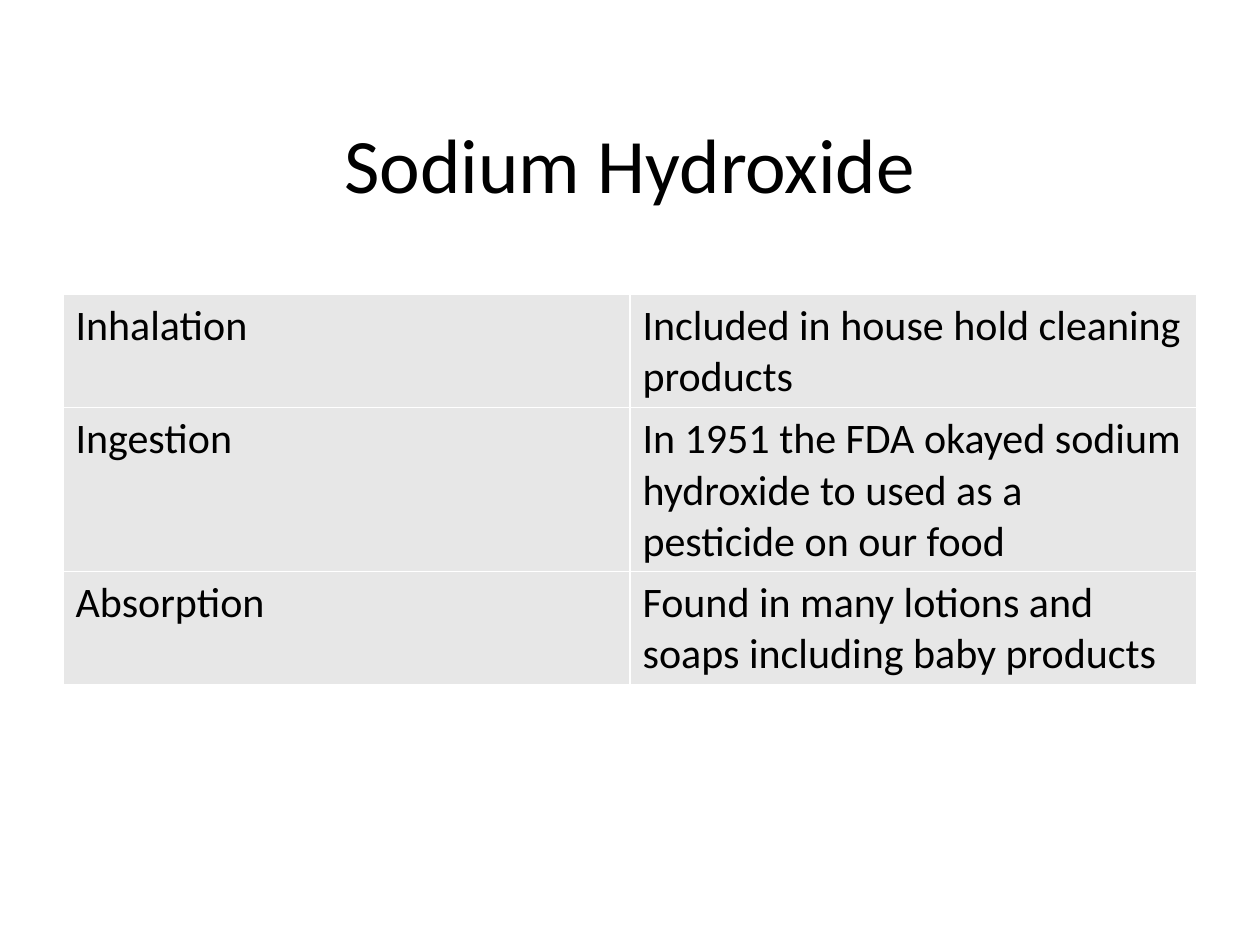
from dataclasses import dataclass

from lxml.etree import SubElement
from pptx import Presentation
from pptx.dml.color import RGBColor as RGB
from pptx.enum.text import MSO_ANCHOR as Anchor, PP_ALIGN as Align
from pptx.oxml.ns import qn
from pptx.util import Cm, Pt


@dataclass(frozen=True)
class Theme:
    font: str = "Calibri"
    text: str = "000000"
    cell: str = "E7E7E7"
    border: str = "FFFFFF"
    title_size: int = 44
    body_size: int = 24


theme = Theme()


def add_run(p, text, size):
    r = p.add_run()
    r.text = text
    r.font.name = theme.font
    r.font.size = Pt(size)
    r.font.color.rgb = RGB.from_string(theme.text)


def add_borders(cell):
    tc_pr = cell._tc.get_or_add_tcPr()
    for side in ("lnL", "lnR", "lnT", "lnB"):
        ln = SubElement(tc_pr, qn(f"a:{side}"), w=str(Pt(1)))
        fill = SubElement(ln, qn("a:solidFill"))
        SubElement(fill, qn("a:srgbClr"), val=theme.border)


prs = Presentation()
prs.slide_width, prs.slide_height = Cm(25.4), Cm(19.05)
s = prs.slides.add_slide(prs.slide_layouts[6])
left, width = Cm(1.27), Cm(22.86)

# Title
tf = s.shapes.add_textbox(left, Cm(1.7), width, Cm(3.18)).text_frame
tf.word_wrap = True
tf.vertical_anchor = Anchor.MIDDLE
p = tf.paragraphs[0]
p.alignment = Align.CENTER
add_run(p, "Sodium Hydroxide", theme.title_size)

# Exposure routes table
routes = [
    ("Inhalation", "Included in house hold cleaning products"),
    ("Ingestion", "In 1951 the FDA okayed sodium hydroxide to used as a pesticide on our food"),
    ("Absorption", "Found in many lotions and soaps including baby products"),
]
row_height = Cm(1.03)
table = s.shapes.add_table(len(routes), 2, left, Cm(5.93), width,
                           row_height * len(routes)).table
table.first_row = False
table.horz_banding = False
for i, route in enumerate(routes):
    for j, text in enumerate(route):
        cell = table.cell(i, j)
        add_borders(cell)
        cell.fill.solid()
        cell.fill.fore_color.rgb = RGB.from_string(theme.cell)
        add_run(cell.text_frame.paragraphs[0], text, theme.body_size)

prs.save("out.pptx")
